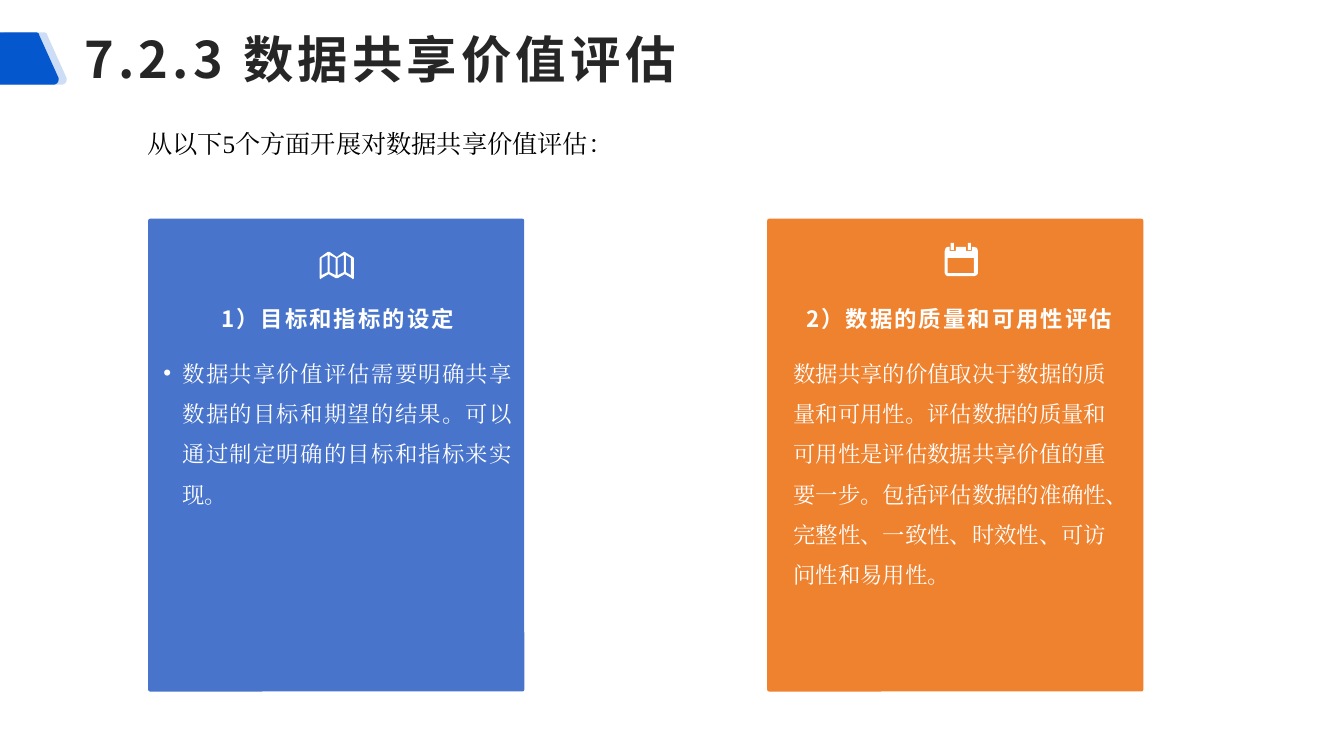
from dataclasses import dataclass

from lxml import etree
from pptx import Presentation
from pptx.dml.color import RGBColor
from pptx.enum.shapes import MSO_SHAPE
from pptx.enum.text import MSO_ANCHOR, MSO_AUTO_SIZE, PP_ALIGN
from pptx.oxml.ns import qn
from pptx.util import Inches, Pt

ROUNDED = MSO_SHAPE.ROUNDED_RECTANGLE
LEFT, CENTER, JUSTIFY = PP_ALIGN.LEFT, PP_ALIGN.CENTER, PP_ALIGN.JUSTIFY
TOP, MIDDLE = MSO_ANCHOR.TOP, MSO_ANCHOR.MIDDLE
GROW, FIXED = MSO_AUTO_SIZE.SHAPE_TO_FIT_TEXT, MSO_AUTO_SIZE.NONE


@dataclass(frozen=True)
class Theme:
    accent: str = "0557CD"
    blue: str = "4874CB"
    orange: str = "EE822F"
    white: str = "FFFFFF"
    black: str = "000000"
    ink: str = "262626"
    sans: str = "Noto Sans CJK SC"
    serif: str = "Times New Roman"
    title_size: int = 36
    intro_size: int = 18
    card_size: int = 16


THEME = Theme()

# Icon outlines, in inches from the icon's top left corner
CALENDAR = [
    [(0.03, 0.04), (0.05, 0.04), (0.05, 0.08), (0.11, 0.08), (0.11, 0.04),
     (0.21, 0.04), (0.21, 0.08), (0.27, 0.08), (0.27, 0.04), (0.29, 0.04),
     (0.32, 0.05), (0.33, 0.08), (0.33, 0.3), (0.32, 0.32), (0.29, 0.33),
     (0.03, 0.33), (0.01, 0.32), (0, 0.3), (0, 0.08), (0.01, 0.05)],
    [(0.03, 0.15), (0.29, 0.15), (0.29, 0.3), (0.03, 0.3)],
    [(0.06, 0), (0.09, 0), (0.09, 0.07), (0.06, 0.07)],
    [(0.23, 0), (0.26, 0), (0.26, 0.07), (0.23, 0.07)],
]
MAP_BORDER = [
    (0, 0.06), (0.01, 0.05), (0.08, 0), (0.1, 0), (0.17, 0.05), (0.24, 0),
    (0.25, 0), (0.33, 0.05), (0.34, 0.06), (0.34, 0.26), (0.33, 0.27),
    (0.32, 0.26), (0.25, 0.22), (0.18, 0.26), (0.16, 0.26), (0.09, 0.22),
    (0.02, 0.26), (0.01, 0.27), (0, 0.26),
]


def map_outline():
    """Border plus four panes whose slopes alternate."""
    panes = []
    for index, (left, right) in enumerate(
            [(0.02, 0.08), (0.1, 0.16), (0.18, 0.24), (0.26, 0.31)]):
        start, end = (0.06, 0.03) if index % 2 == 0 else (0.03, 0.06)
        panes.append([(left, start), (right, end),
                      (right, end + 0.17), (left, start + 0.17)])
    return [MAP_BORDER, *panes]


def curve(*controls, steps=8):
    """Points along a cubic curve."""
    weights = (1, 3, 3, 1)
    points = []
    for step in range(steps + 1):
        part = step / steps
        factors = [weight * part ** power * (1 - part) ** (3 - power)
                   for power, weight in enumerate(weights)]
        points.append(tuple(sum(factor * control[axis]
                                for factor, control in zip(factors, controls))
                            for axis in (0, 1)))
    return points


def tab_outline():
    """Slanted tab with rounded corners."""
    return [
        *curve((0.19, 0.03), (0.2, 0.01), (0.21, 0), (0.23, 0)),
        *curve((0.6, 0), (0.62, 0), (0.64, 0.01), (0.64, 0.03)),
        *curve((0.83, 0.45), (0.84, 0.48), (0.82, 0.52), (0.78, 0.52)),
        *curve((0.05, 0.52), (0.01, 0.52), (-0.01, 0.48), (0, 0.45)),
    ]


def paint(shape, color, opacity=None):
    shape.shadow.inherit = False
    shape.fill.solid()
    shape.fill.fore_color.rgb = RGBColor.from_string(color)
    shape.line.fill.background()
    if opacity is not None:
        tint = shape.fill._xPr.find(".//" + qn("a:srgbClr"))
        etree.SubElement(tint, qn("a:alpha"), val=str(opacity * 1000))


def add_outline(page, left, top, contours, color, opacity=None):
    def place(point):
        return Inches(left + point[0]), Inches(top + point[1])

    first, *others = contours
    builder = page.shapes.build_freeform(*place(first[0]), scale=1.0)
    builder.add_line_segments([place(point) for point in first[1:]], close=True)
    for contour in others:
        builder.move_to(*place(contour[0]))
        builder.add_line_segments([place(point) for point in contour[1:]], close=True)
    paint(builder.convert_to_shape(), color, opacity)


def add_panel(page, left, top, width, height, color):
    panel = page.shapes.add_shape(
        ROUNDED, Inches(left), Inches(top), Inches(width), Inches(height))
    panel.adjustments[0] = 0.005
    paint(panel, color)


def add_box(page, left, top, width, height, side=0.1, anchor=TOP, fit=FIXED):
    box = page.shapes.add_textbox(
        Inches(left), Inches(top), Inches(width), Inches(height))
    frame = box.text_frame
    frame.word_wrap = True
    frame.auto_size = fit
    frame.vertical_anchor = anchor
    frame.margin_left = frame.margin_right = Inches(side)
    return frame


def write(para, text, size, color, font, bold=False, spacing=0,
          align=LEFT, line=None, after=None, bullet=False):
    para.alignment = align
    if line:
        para.line_spacing = line
    if after:
        para.space_after = Pt(after)
    if bullet:
        settings = para._p.get_or_add_pPr()
        settings.set("marL", str(Inches(0.19)))
        settings.set("indent", str(-Inches(0.19)))
        etree.SubElement(settings, qn("a:buFont"), typeface="Arial")
        etree.SubElement(settings, qn("a:buChar"), char="•")
    span = para.add_run()
    span.text = text
    span.font.size = Pt(size)
    span.font.bold = bold
    span.font.name = font
    span.font.color.rgb = RGBColor.from_string(color)
    marks = span.font._element
    marks.set("spc", str(int(spacing * 100)))
    etree.SubElement(marks, qn("a:ea"), typeface=font)


def add_card_text(page, left, width, heading, body, **body_format):
    frame = add_box(page, left, 2.85, width, 2.9, side=0)
    write(frame.paragraphs[0], heading, THEME.card_size, THEME.white, THEME.sans,
          bold=True, spacing=1.5, align=CENTER, line=1.5, after=10)
    write(frame.add_paragraph(), body, THEME.card_size, THEME.white, THEME.serif,
          line=1.5, **body_format)


def main():
    deck = Presentation()
    deck.slide_width, deck.slide_height = Inches(13.33), Inches(7.5)
    page = deck.slides.add_slide(deck.slide_layouts[6])

    # Title with its tab
    add_outline(page, -0.17, 0.32, [tab_outline()], THEME.accent, opacity=20)
    add_outline(page, -0.25, 0.32, [tab_outline()], THEME.accent)
    title = add_box(page, 0.74, 0.08, 12.59, 1, anchor=MIDDLE)
    write(title.paragraphs[0], "7.2.3 数据共享价值评估", THEME.title_size,
          THEME.ink, THEME.sans, bold=True, spacing=3)

    # Introduction
    intro = add_box(page, 1.36, 1.22, 6.39, 0.4, fit=GROW)
    write(intro.paragraphs[0], "从以下5个方面开展对数据共享价值评估：",
          THEME.intro_size, THEME.black, THEME.serif)

    # Cards
    for left, color in ((1.47, THEME.blue), (7.61, THEME.orange)):
        add_panel(page, left, 2.17, 3.73, 4.69, color)
    add_card_text(
        page, 1.62, 3.46, "1）目标和指标的设定",
        "数据共享价值评估需要明确共享数据的目标和期望的结果。"
        "可以通过制定明确的目标和指标来实现。",
        align=JUSTIFY, bullet=True)
    add_card_text(
        page, 7.87, 3.29, "2）数据的质量和可用性评估",
        "数据共享的价值取决于数据的质量和可用性。评估数据的质量和可用性是"
        "评估数据共享价值的重要一步。包括评估数据的准确性、完整性、一致性、"
        "时效性、可访问性和易用性。")

    # Icons
    add_outline(page, 3.17, 2.5, map_outline(), THEME.white)
    add_outline(page, 9.37, 2.41, CALENDAR, THEME.white)

    deck.save("out.pptx")


if __name__ == "__main__":
    main()
